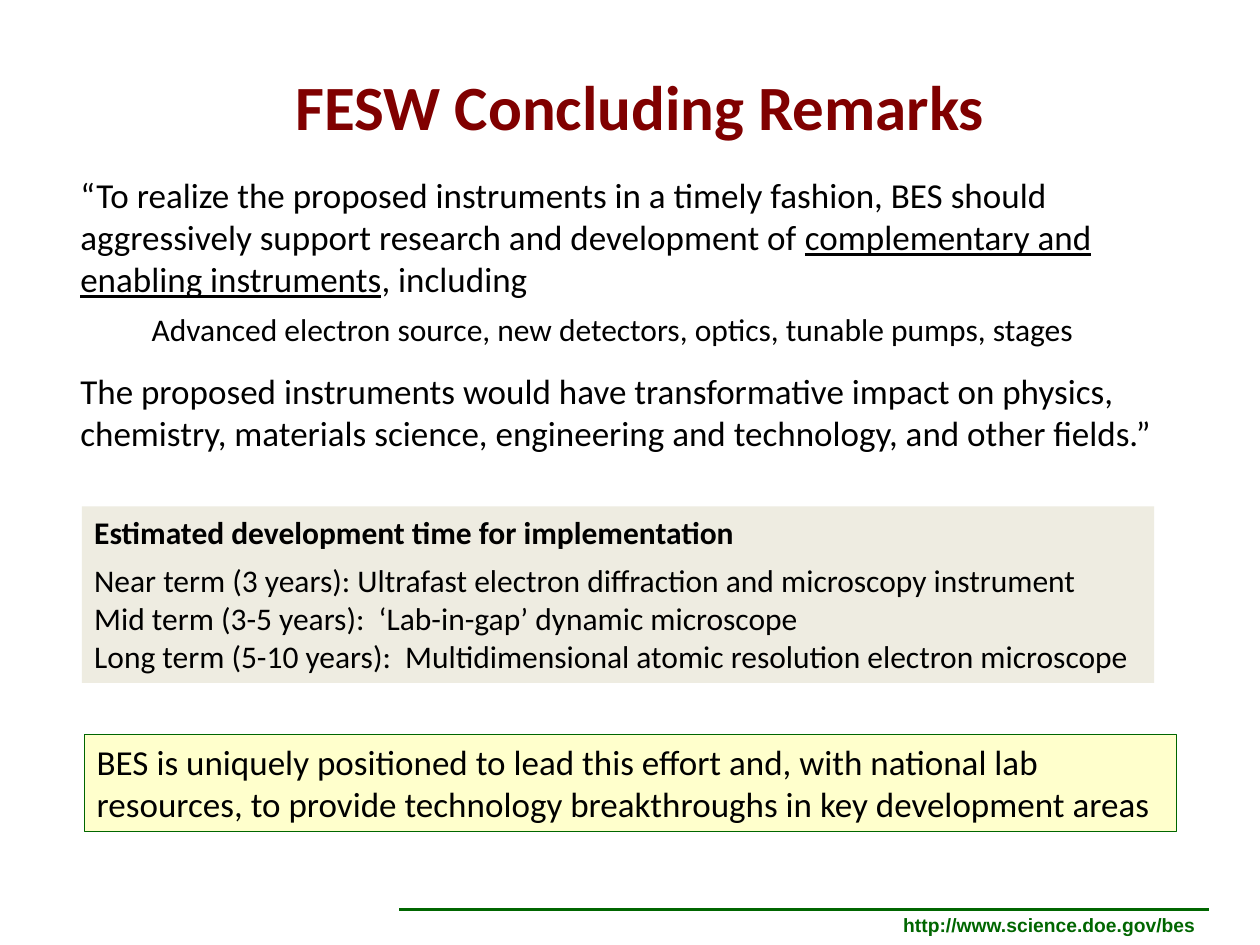
from dataclasses import dataclass

from lxml import etree
from pptx import Presentation
from pptx.dml.color import RGBColor
from pptx.enum import shapes, text
from pptx.oxml import ns
from pptx.util import Cm, Pt


@dataclass(frozen=True)
class Theme:
    font: str = "Calibri"
    footer_font: str = "Arial"
    ink: str = "000000"
    maroon: str = "800000"
    green: str = "006600"
    yellow: str = "FFFFCC"
    beige: str = "EEECE1"
    title_size: int = 36
    body_size: int = 20
    detail_size: int = 18
    footer_size: int = 11


THEME = Theme()


def add_run(paragraph, words, size, color=THEME.ink, font=THEME.font,
            bold=False, underline=False):
    run = paragraph.add_run()
    run.text = words
    run.font.name = font
    run.font.size = Pt(size)
    run.font.bold = bold
    run.font.underline = underline
    run.font.color.rgb = RGBColor.from_string(color)


def next_paragraph(frame, before=0, after=0, indent=0):
    """Return the empty first paragraph, or a new one, with its spacing set."""
    first = frame.paragraphs[0]
    paragraph = frame.add_paragraph() if first.runs else first
    paragraph.alignment = text.PP_ALIGN.LEFT
    paragraph.space_before = Pt(before)
    paragraph.space_after = Pt(after)
    if indent:
        properties = paragraph._p.get_or_add_pPr()
        properties.set("marL", str(Cm(indent)))
        properties.set("indent", "0")
    return paragraph


def add_text_frame(slide, left, top, width, height, wrap=True):
    box = slide.shapes.add_textbox(Cm(left), Cm(top), Cm(width), Cm(height))
    box.text_frame.word_wrap = wrap
    return box.text_frame


def add_panel(slide, left, top, width, height, fill, line=None):
    """Add a filled rectangle and return its text frame."""
    panel = slide.shapes.add_shape(shapes.MSO_SHAPE.RECTANGLE,
                                   Cm(left), Cm(top), Cm(width), Cm(height))
    panel.shadow.inherit = False
    panel.fill.solid()
    panel.fill.fore_color.rgb = RGBColor.from_string(fill)
    if line:
        panel.line.color.rgb = RGBColor.from_string(line)
        panel.line.width = Pt(0.75)
    else:
        panel.line.fill.background()
    frame = panel.text_frame
    frame.word_wrap = True
    frame.vertical_anchor = text.MSO_ANCHOR.TOP
    return frame


def set_title(slide):
    title = slide.shapes.title
    title.left, title.top, title.width, title.height = (
        Cm(1.47), Cm(1.07), Cm(22.86), Cm(2.11))
    frame = title.text_frame
    frame.vertical_anchor = text.MSO_ANCHOR.MIDDLE
    paragraph = next_paragraph(frame)
    paragraph.alignment = text.PP_ALIGN.CENTER
    add_run(paragraph, "FESW Concluding Remarks", THEME.title_size,
            THEME.maroon, bold=True)


def add_quotation(slide):
    frame = add_text_frame(slide, 1.37, 3.38, 23.06, 5.94)
    size = THEME.body_size
    opening = next_paragraph(frame, after=6)
    add_run(opening, "“To realize the proposed instruments in a timely fashion, BES "
            "should aggressively support research and development of ", size)
    add_run(opening, "complementary and enabling instruments", size, underline=True)
    add_run(opening, ", including", size)
    add_run(next_paragraph(frame, indent=1.44),
            "Advanced electron source, new detectors, optics, tunable pumps, stages",
            THEME.detail_size)
    add_run(next_paragraph(frame, before=12),
            "The proposed instruments would have transformative impact on physics, "
            "chemistry, materials science, engineering and technology, and other "
            "fields.”", size)


def add_timeline(slide):
    frame = add_panel(slide, 1.65, 10.21, 21.62, 3.56, THEME.beige)
    add_run(next_paragraph(frame, after=6),
            "Estimated development time for implementation",
            THEME.detail_size, bold=True)
    for term in (
        "Near term (3 years): Ultrafast electron diffraction and microscopy instrument",
        "Mid term (3-5 years):  ‘Lab-in-gap’ dynamic microscope",
        "Long term (5-10 years):  Multidimensional atomic resolution electron microscope",
    ):
        add_run(next_paragraph(frame), term, THEME.detail_size)


def add_conclusion(slide):
    frame = add_panel(slide, 1.7, 14.81, 22.02, 1.96, THEME.yellow, THEME.green)
    add_run(next_paragraph(frame),
            "BES is uniquely positioned to lead this effort and, with national lab "
            "resources, to provide technology breakthroughs in key development areas",
            THEME.body_size)


def add_footer(slide):
    rule = slide.shapes.add_connector(shapes.MSO_CONNECTOR.STRAIGHT,
                                      Cm(8.05), Cm(18.34), Cm(24.38), Cm(18.34))
    rule.line.color.rgb = RGBColor.from_string(THEME.green)
    rule.line.width = Pt(1.5)
    etree.SubElement(rule._element.spPr, ns.qn("a:effectLst"))
    paragraph = next_paragraph(
        add_text_frame(slide, 17.93, 18.29, 6.45, 0.74, wrap=False))
    paragraph.alignment = text.PP_ALIGN.CENTER
    add_run(paragraph, "http://www.science.doe.gov/bes", THEME.footer_size,
            THEME.green, THEME.footer_font, bold=True)


def main():
    presentation = Presentation()
    presentation.slide_width = Cm(25.4)
    presentation.slide_height = Cm(19.05)
    slide = presentation.slides.add_slide(presentation.slide_layouts[5])
    add_footer(slide)
    add_quotation(slide)
    set_title(slide)
    add_conclusion(slide)
    add_timeline(slide)
    presentation.save("out.pptx")


if __name__ == "__main__":
    main()
